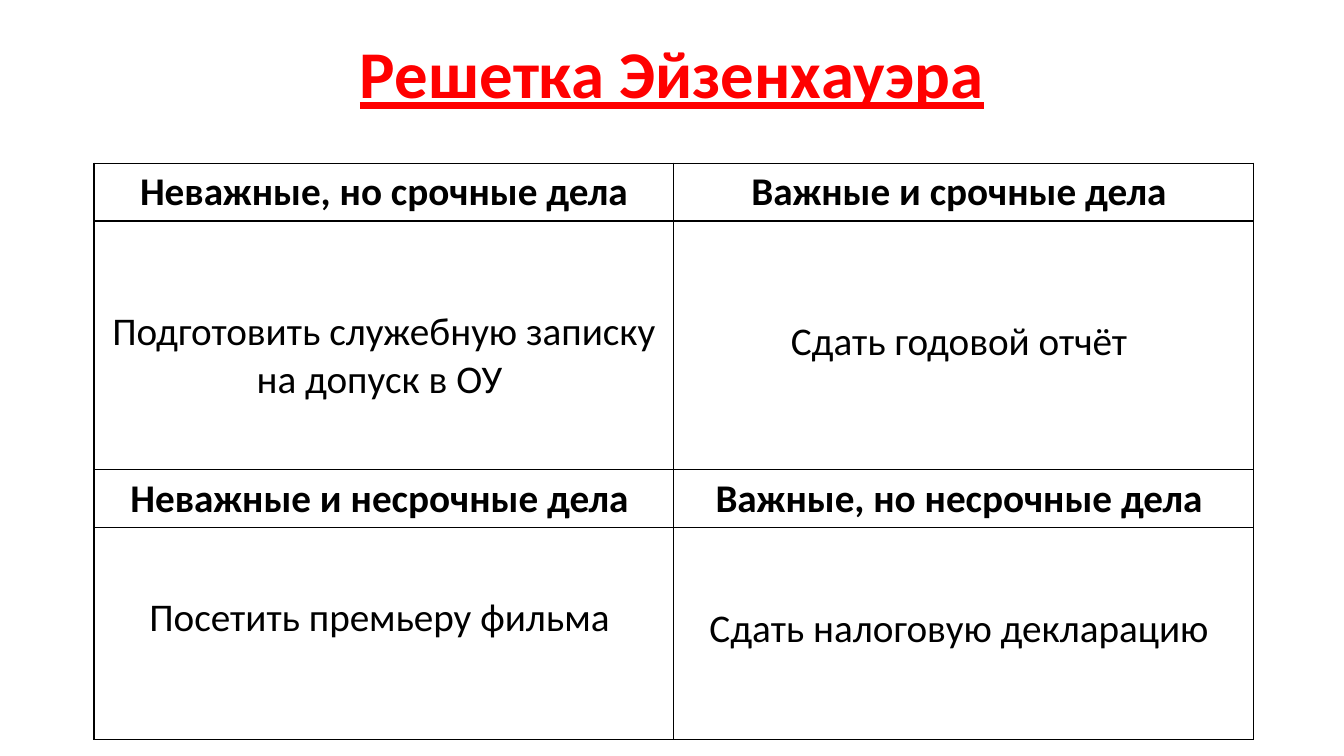
from lxml.etree import SubElement
from pptx import Presentation
from pptx.dml.color import RGBColor
from pptx.enum.text import MSO_ANCHOR, PP_ALIGN
from pptx.oxml.ns import qn
from pptx.util import Cm, Pt


def write(frame, text, size, color="000000", bold=False, underline=False, line_spacing=1.0):
    frame.word_wrap = True
    paragraph = frame.paragraphs[0]
    paragraph.alignment = PP_ALIGN.CENTER
    paragraph.line_spacing = line_spacing
    run = paragraph.add_run()
    run.text = text
    run.font.name = "Calibri"
    run.font.size = Pt(size)
    run.font.bold = bold
    run.font.underline = underline
    run.font.color.rgb = RGBColor.from_string(color)


def add_borders(cell, color="000000", width=1):
    properties = cell._tc.get_or_add_tcPr()
    for position, side in enumerate(("lnL", "lnR", "lnT", "lnB")):
        line = properties.makeelement(qn(f"a:{side}"), {"w": str(Pt(width))})
        fill = SubElement(line, qn("a:solidFill"))
        SubElement(fill, qn("a:srgbClr"), val=color)
        properties.insert(position, line)


presentation = Presentation()
presentation.slide_width = Cm(33.87)
presentation.slide_height = Cm(19.05)
slide = presentation.slides.add_slide(presentation.slide_layouts[6])

title = slide.shapes.add_textbox(Cm(2.33), Cm(1.02), Cm(29.21), Cm(1.85)).text_frame
title.margin_top = title.margin_bottom = 0
title.vertical_anchor = MSO_ANCHOR.MIDDLE
write(title, "Решетка Эйзенхауэра", 47.7, "FF0000", bold=True, underline=True, line_spacing=0.9)

# Each cell: text and top margin in cm
HEADING_TOP = 0.13
rows = [
    (1.46, True, [("Неважные, но срочные дела", HEADING_TOP),
                  ("Важные и срочные дела ", HEADING_TOP)]),
    (6.27, False, [("Подготовить служебную записку на допуск в ОУ ", 2.2),
                   ("Сдать годовой отчёт ", 2.45)]),
    (1.46, True, [("Неважные и несрочные дела ", HEADING_TOP),
                  ("Важные, но несрочные дела ", HEADING_TOP)]),
    (5.34, False, [("Посетить премьеру фильма ", 1.68),
                   ("Сдать налоговую декларацию ", 1.94)]),
]
total_height = sum(height for height, _, _ in rows)
matrix = slide.shapes.add_table(
    len(rows), 2, Cm(2.37), Cm(4.11), Cm(29.21), Cm(total_height)).table
matrix.first_row = matrix.horz_banding = False

for row_index, (height, is_heading, tasks) in enumerate(rows):
    matrix.rows[row_index].height = Cm(height)
    for column_index, (task, top) in enumerate(tasks):
        cell = matrix.cell(row_index, column_index)
        cell.margin_top = Cm(top)
        cell.fill.background()
        add_borders(cell)
        write(cell.text_frame, task, 28, bold=is_heading)

presentation.save("out.pptx")
